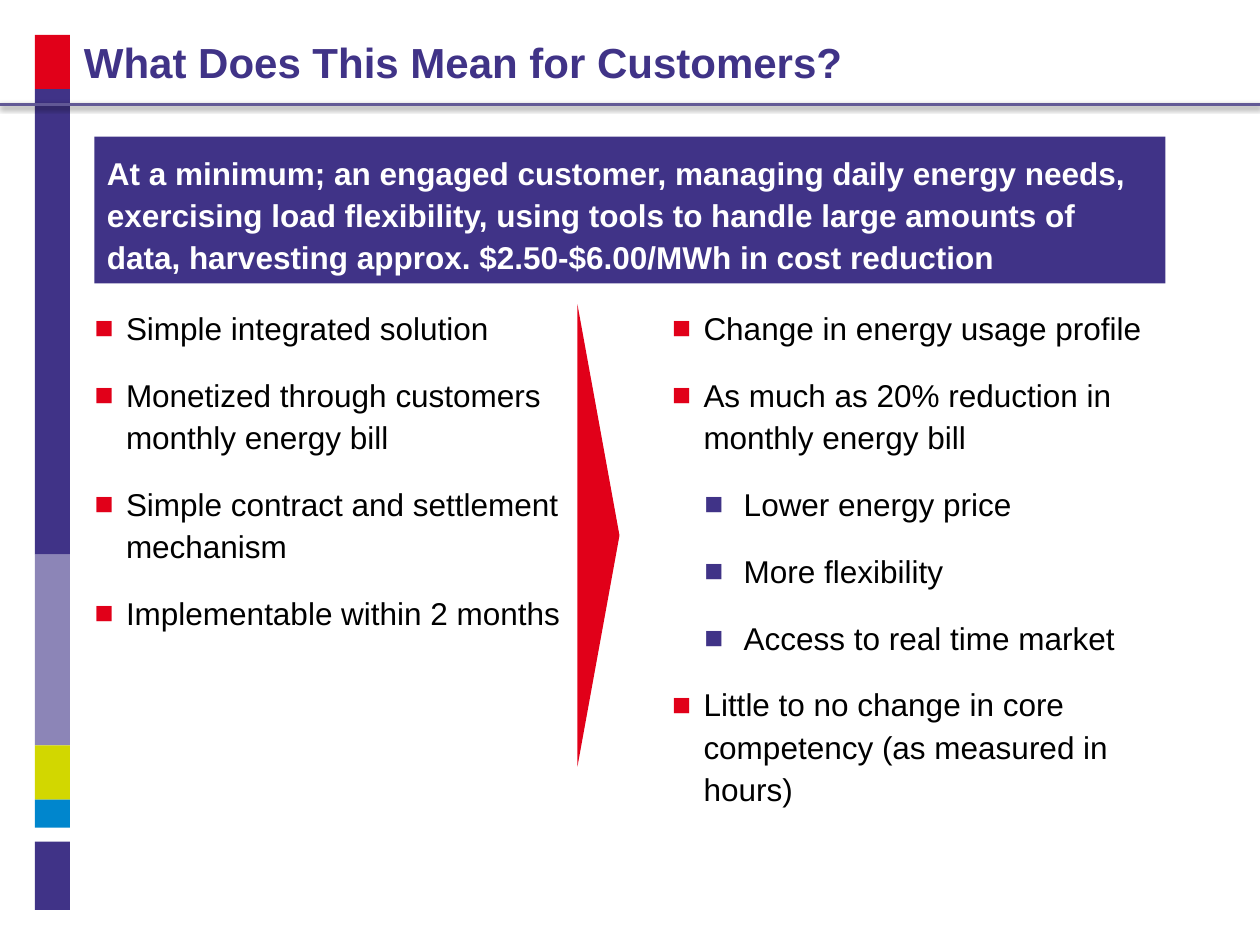
from lxml import etree
from pptx import Presentation
from pptx.dml.color import RGBColor
from pptx.enum.shapes import MSO_CONNECTOR, MSO_SHAPE
from pptx.enum.text import MSO_ANCHOR, PP_ALIGN
from pptx.oxml.ns import qn
from pptx.util import Pt

RECT = MSO_SHAPE.RECTANGLE
WEDGE = MSO_SHAPE.ISOSCELES_TRIANGLE
LINE = MSO_CONNECTOR.STRAIGHT
TOP = MSO_ANCHOR.TOP
LEFT = PP_ALIGN.LEFT

RED = RGBColor(0xE1, 0x00, 0x19)
INDIGO = RGBColor(0x40, 0x33, 0x87)
LILAC = RGBColor(0x8C, 0x85, 0xB7)
LIME = RGBColor(0xD2, 0xD7, 0x00)
BLUE = RGBColor(0x00, 0x86, 0xCD)
RULE = RGBColor(0x61, 0x58, 0x95)
BLACK = RGBColor(0x00, 0x00, 0x00)
WHITE = RGBColor(0xFF, 0xFF, 0xFF)

BARS = [
    (20, 51, RED),
    (51, 317, INDIGO),
    (317, 426, LILAC),
    (426, 457, LIME),
    (457, 473, BLUE),
    (481, 520, INDIGO),
]
LEVELS = [(18, 18, RED), (41, 22.5, INDIGO)]
OFFERS = [
    (0, "Simple integrated solution"),
    (0, "Monetized through customers monthly energy bill"),
    (0, "Simple contract and settlement mechanism"),
    (0, "Implementable within 2 months"),
]
GAINS = [
    (0, "Change in energy usage profile"),
    (0, "As much as 20% reduction in monthly energy bill"),
    (1, "Lower energy price"),
    (1, "More flexibility"),
    (1, "Access to real time market"),
    (0, "Little to no change in core competency (as measured in hours)"),
]
CLAIM = (
    "At a minimum; an engaged customer, managing daily energy needs, "
    "exercising load flexibility, using tools to handle large amounts of "
    "data, harvesting approx. $2.50-$6.00/MWh in cost reduction"
)


def add_tag(parent, name, **attrs):
    tag = etree.SubElement(parent, qn(name))
    for key, value in attrs.items():
        tag.set(key, str(value))
    return tag


def add_block(slide, kind, left, top, width, height, color):
    block = slide.shapes.add_shape(kind, Pt(left), Pt(top), Pt(width), Pt(height))
    block.shadow.inherit = False
    block.fill.solid()
    block.fill.fore_color.rgb = color
    block.line.fill.background()
    return block


def add_rule(slide, y):
    rule = slide.shapes.add_connector(LINE, Pt(720), Pt(y), Pt(0), Pt(y))
    rule.line.color.rgb = RULE
    rule.line.width = Pt(2)
    effects = add_tag(rule._element.spPr, "a:effectLst")
    shadow = add_tag(effects, "a:outerShdw", blurRad=Pt(3), dist=Pt(1),
                     dir=90 * 60000, rotWithShape=0)
    color = add_tag(shadow, "a:srgbClr", val=BLACK)
    add_tag(color, "a:alpha", val=38000)


def add_box(slide, left, top, width, height):
    return slide.shapes.add_textbox(Pt(left), Pt(top), Pt(width), Pt(height))


def set_frame(shape, inset=0):
    frame = shape.text_frame
    frame.word_wrap = True
    frame.vertical_anchor = TOP
    frame.margin_left = frame.margin_right = Pt(inset)
    frame.margin_top = frame.margin_bottom = Pt(inset)
    return frame


def add_bullet(para, level):
    margin, hang, color = LEVELS[level]
    para.level = level
    props = para._p.get_or_add_pPr()
    props.set("marL", str(Pt(margin)))
    props.set("indent", str(-Pt(hang)))
    add_tag(add_tag(props, "a:buClr"), "a:srgbClr", val=color)
    add_tag(props, "a:buFont", typeface="Arial")
    add_tag(props, "a:buChar", char="■")


def write(para, text, *, size=18, color=BLACK, bold=False,
          spacing=1.12, before=0, after=6, level=None):
    if level is not None:
        add_bullet(para, level)
    para.alignment = LEFT
    para.line_spacing = spacing
    para.space_before = Pt(before)
    para.space_after = Pt(after)
    run = para.add_run()
    run.text = text
    run.font.name = "Arial"
    run.font.size = Pt(size)
    run.font.bold = bold
    run.font.color.rgb = color


def add_list(shape, items):
    frame = set_frame(shape)
    for index, (level, text) in enumerate(items):
        para = frame.add_paragraph() if index else frame.paragraphs[0]
        write(para, text, level=level, before=8 if index else 0)


def main():
    deck = Presentation()
    deck.slide_width = Pt(720)
    deck.slide_height = Pt(540)
    slide = deck.slides.add_slide(deck.slide_layouts[6])

    for top, bottom, color in BARS:
        add_block(slide, RECT, 20, top, 20, bottom - top, color)
    add_rule(slide, 59.75)

    title = set_frame(add_box(slide, 48, 24, 576, 45))
    write(title.paragraphs[0], "What Does This Mean for Customers?",
          size=24, color=INDIGO, bold=True, spacing=0.9, after=0)

    add_list(add_box(slide, 54, 174, 270, 324), OFFERS)
    add_list(add_block(slide, RECT, 384, 174, 300, 324, WHITE), GAINS)
    wedge = add_block(slide, WEDGE, 210, 294, 264, 24, RED)
    wedge.rotation = 90

    claim = set_frame(add_block(slide, RECT, 54, 78, 612, 84, INDIGO), 7.2)
    write(claim.paragraphs[0], CLAIM, color=WHITE, bold=True)

    deck.save("out.pptx")


if __name__ == "__main__":
    main()
